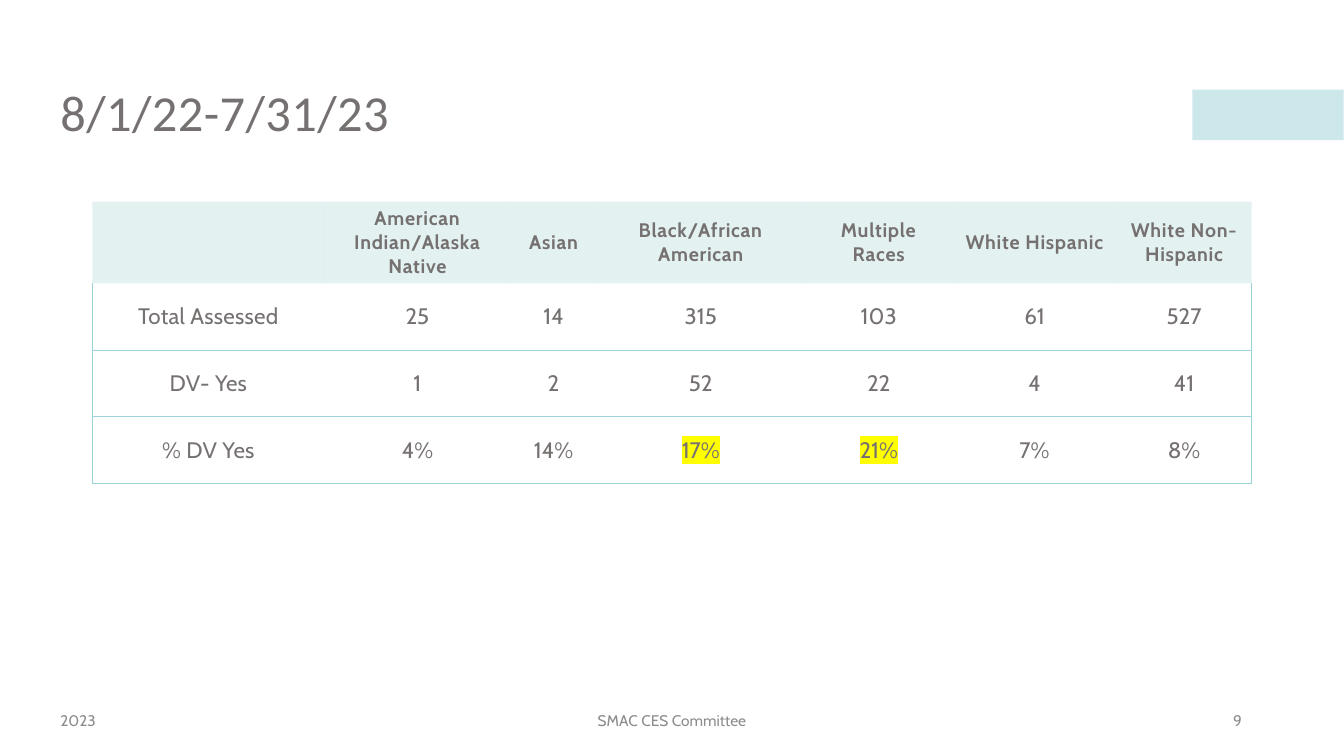
from dataclasses import dataclass

import lxml.etree
import pptx
import pptx.dml.color
import pptx.enum.shapes
import pptx.enum.text
import pptx.oxml.ns
import pptx.presentation
import pptx.slide
import pptx.table
import pptx.text.text
import pptx.util

Cm = pptx.util.Cm
Pt = pptx.util.Pt
Color = pptx.dml.color.RGBColor
Align = pptx.enum.text.PP_ALIGN
Middle = pptx.enum.text.MSO_ANCHOR.MIDDLE
qn = pptx.oxml.ns.qn

GRAY = Color(0x76, 0x71, 0x71)
PALE = Color(0x8C, 0x8C, 0x8C)
TEAL = Color(0x76, 0xBC, 0xBC)
AQUA = Color(0x9C, 0xD3, 0xD9)
YELLOW = Color(0xFF, 0xFF, 0x00)
PLAIN = "{2D5ABB26-0587-4C30-8999-92F81FD0307C}"

WIDTHS = (5.84, 4.7, 2.16, 5.26, 3.71, 4.14, 3.4)
HEIGHTS = (2.06, 1.68, 1.68, 1.68)
ROWS = (
    ("", "American Indian/Alaska Native", "Asian", "Black/African American",
     "Multiple Races", "White Hispanic", "White Non-Hispanic"),
    ("Total Assessed", "25", "14", "315", "103", "61", "527"),
    ("DV- Yes", "1", "2", "52", "22", "4", "41"),
    ("% DV Yes", "4%", "14%", "17%", "21%", "7%", "8%"),
)
MARKED = ("17%", "21%")


@dataclass
class Style:
    size: float
    color: Color
    font: str = "Cabin"
    bold: bool = False
    space: float = 0


@dataclass
class Note:
    text: str
    left: float
    width: float
    align: Align


TITLE = Style(36, GRAY, "Calibri", space=0.3)
HEAD = Style(14, GRAY, bold=True, space=0.5)
LABEL = Style(16, GRAY, space=0.2)
VALUE = Style(16, GRAY)
FOOT = Style(11, PALE)

NOTES = (
    Note("2023", 1.27, 7.62, Align.LEFT),
    Note("SMAC CES Committee", 11.22, 11.43, Align.CENTER),
    Note("9", 23.93, 7.62, Align.RIGHT),
)


def write(frame: pptx.text.text.TextFrame, text: str, style: Style, align: Align) -> None:
    frame.text = text
    para = frame.paragraphs[0]
    para.alignment = align
    for run in para.runs:
        font = run.font
        font.size = Pt(style.size)
        font.name = style.font
        font.bold = style.bold
        font.color.rgb = style.color
        font._element.set("spc", str(round(style.space * 100)))


def fade(fill: pptx.dml.fill.FillFormat, color: Color, part: int) -> None:
    fill.solid()
    fill.fore_color.rgb = color
    tint = fill._xPr.find(".//" + qn("a:srgbClr"))
    lxml.etree.SubElement(tint, qn("a:alpha"), val=str(part * 1000))


def mark(run: pptx.text.text._Run) -> None:
    props = run.font._element
    light = props.makeelement(qn("a:highlight"), {})
    lxml.etree.SubElement(light, qn("a:srgbClr"), val=str(YELLOW))
    props.find(qn("a:solidFill")).addnext(light)


def edge(cell: pptx.table._Cell, sides: str) -> None:
    props = cell._tc.get_or_add_tcPr()
    for side in sides:
        line = lxml.etree.SubElement(props, qn("a:ln" + side), w=str(Pt(0.5)))
        fill = lxml.etree.SubElement(line, qn("a:solidFill"))
        lxml.etree.SubElement(fill, qn("a:srgbClr"), val=str(AQUA))


def fill_cell(cell: pptx.table._Cell, text: str, row: int, col: int) -> None:
    cell.vertical_anchor = Middle
    style = HEAD if row == 0 else LABEL if col == 0 else VALUE
    write(cell.text_frame, text, style, Align.CENTER)
    if row == 0:
        fade(cell.fill, TEAL, 20)
        return
    left = "L" if col == 0 else ""
    right = "R" if col == len(WIDTHS) - 1 else ""
    top = "T" if row > 1 else ""
    edge(cell, left + right + top + "B")
    cell.fill.background()
    if text in MARKED:
        mark(cell.text_frame.paragraphs[0].runs[0])


def add_grid(slide: pptx.slide.Slide) -> None:
    frame = slide.shapes.add_table(len(ROWS), len(WIDTHS), Cm(2.33), Cm(5.08),
                                   Cm(sum(WIDTHS)), Cm(sum(HEIGHTS)))
    grid = frame.table
    grid._tbl.tblPr.find(qn("a:tableStyleId")).text = PLAIN
    for col, width in zip(grid.columns, WIDTHS):
        col.width = Cm(width)
    for row, height in zip(grid.rows, HEIGHTS):
        row.height = Cm(height)
    for row, texts in enumerate(ROWS):
        for col, text in enumerate(texts):
            fill_cell(grid.cell(row, col), text, row, col)


def add_note(slide: pptx.slide.Slide, note: Note) -> None:
    box = slide.shapes.add_textbox(Cm(note.left), Cm(17.65), Cm(note.width), Cm(1.02))
    frame = box.text_frame
    frame.word_wrap = True
    frame.vertical_anchor = Middle
    write(frame, note.text, FOOT, note.align)


def add_bar(slide: pptx.slide.Slide) -> None:
    kind = pptx.enum.shapes.MSO_SHAPE.RECTANGLE
    bar = slide.shapes.add_shape(kind, Cm(30.05), Cm(2.26), Cm(3.81), Cm(1.27))
    bar.shadow.inherit = False
    bar.line.fill.background()
    fade(bar.fill, AQUA, 50)


def add_title(slide: pptx.slide.Slide) -> None:
    title = slide.shapes.title
    title.left, title.top = Cm(1.27), Cm(1.07)
    title.width, title.height = Cm(31.32), Cm(3.68)
    title.text_frame.vertical_anchor = Middle
    write(title.text_frame, "8/1/22-7/31/23", TITLE, Align.LEFT)
    title.text_frame.paragraphs[0].line_spacing = 0.9


def main() -> None:
    deck = pptx.Presentation()
    deck.slide_width, deck.slide_height = Cm(33.87), Cm(19.05)
    slide = deck.slides.add_slide(deck.slide_layouts[5])
    add_bar(slide)
    add_title(slide)
    add_grid(slide)
    for note in NOTES:
        add_note(slide, note)
    deck.save("out.pptx")


if __name__ == "__main__":
    main()
